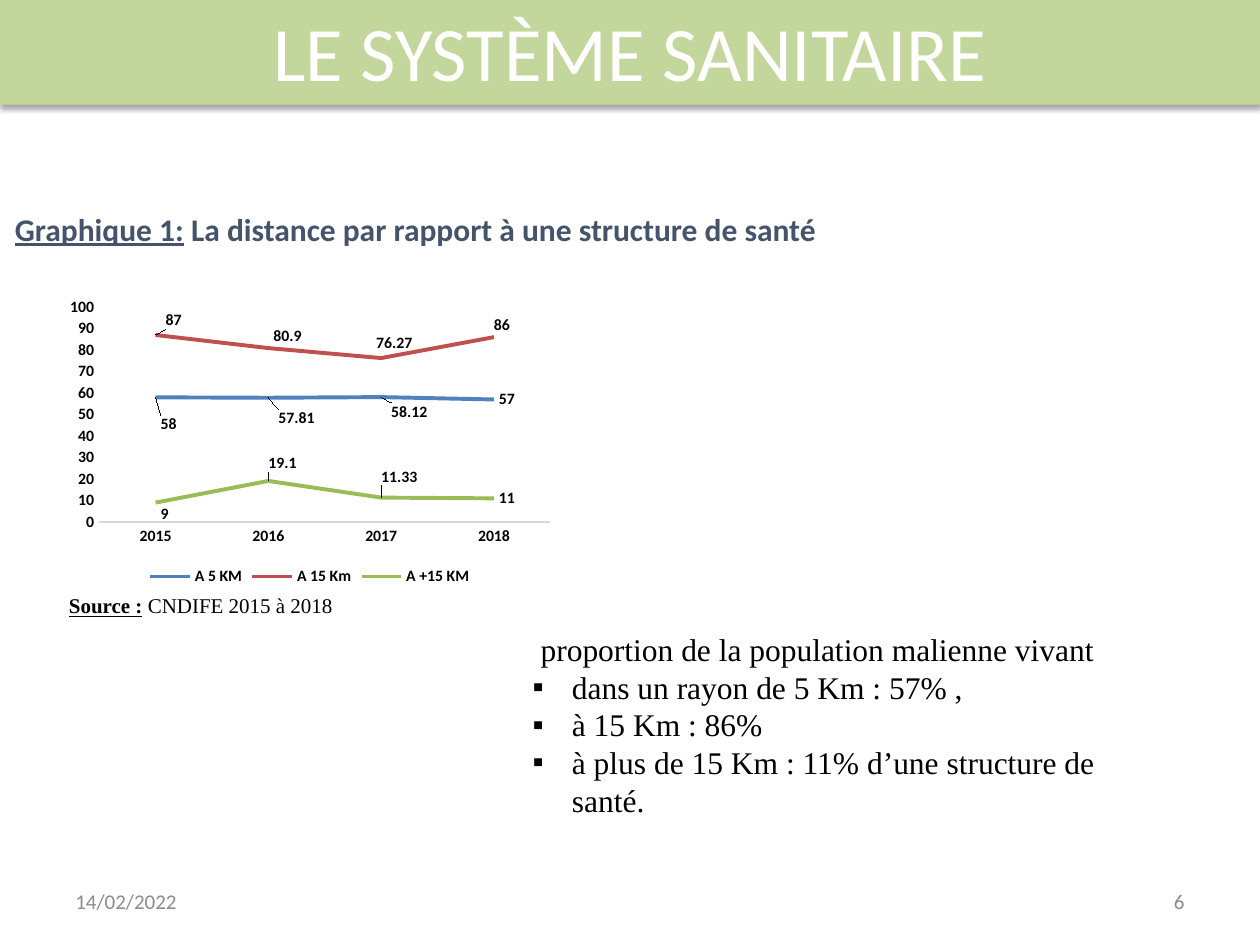
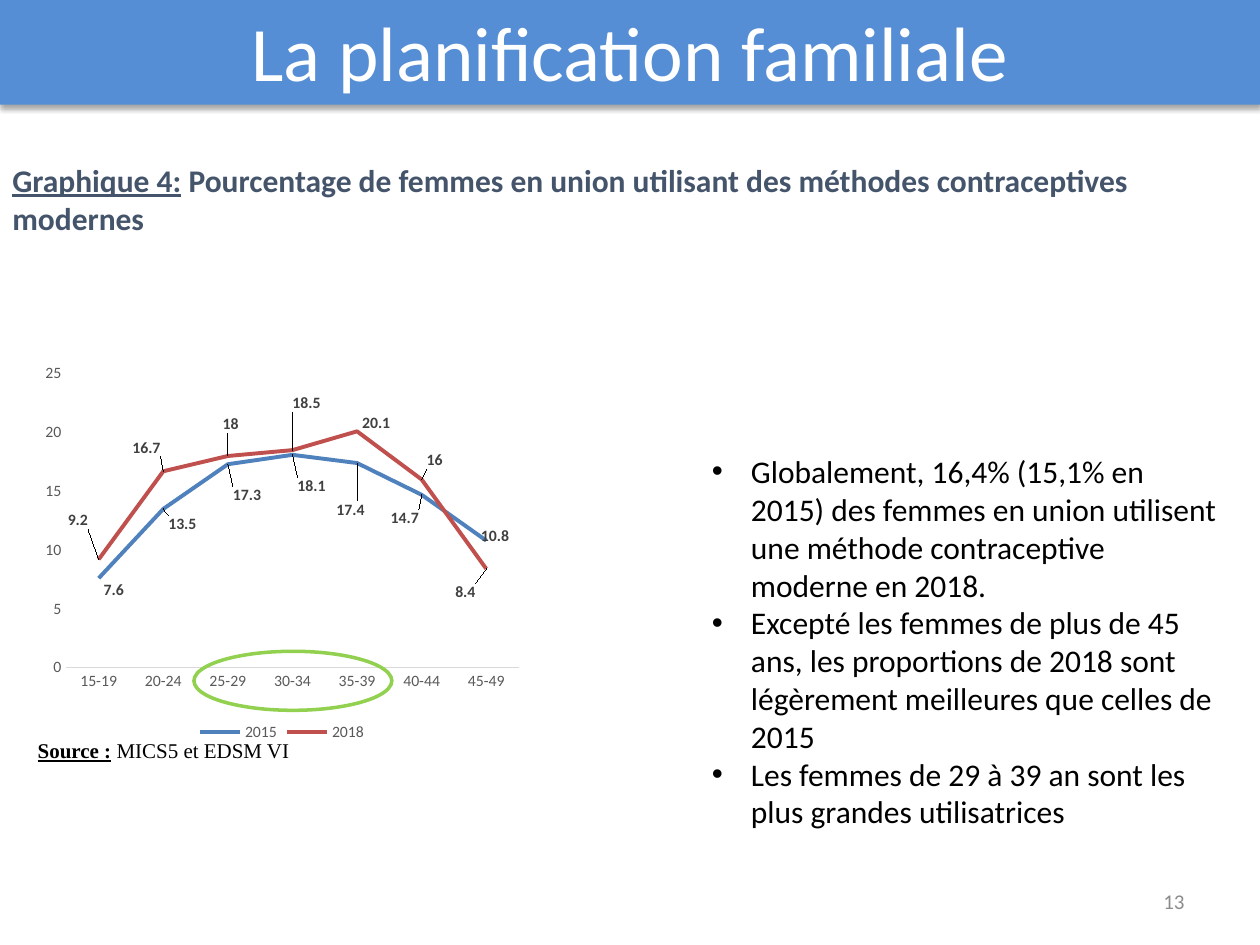
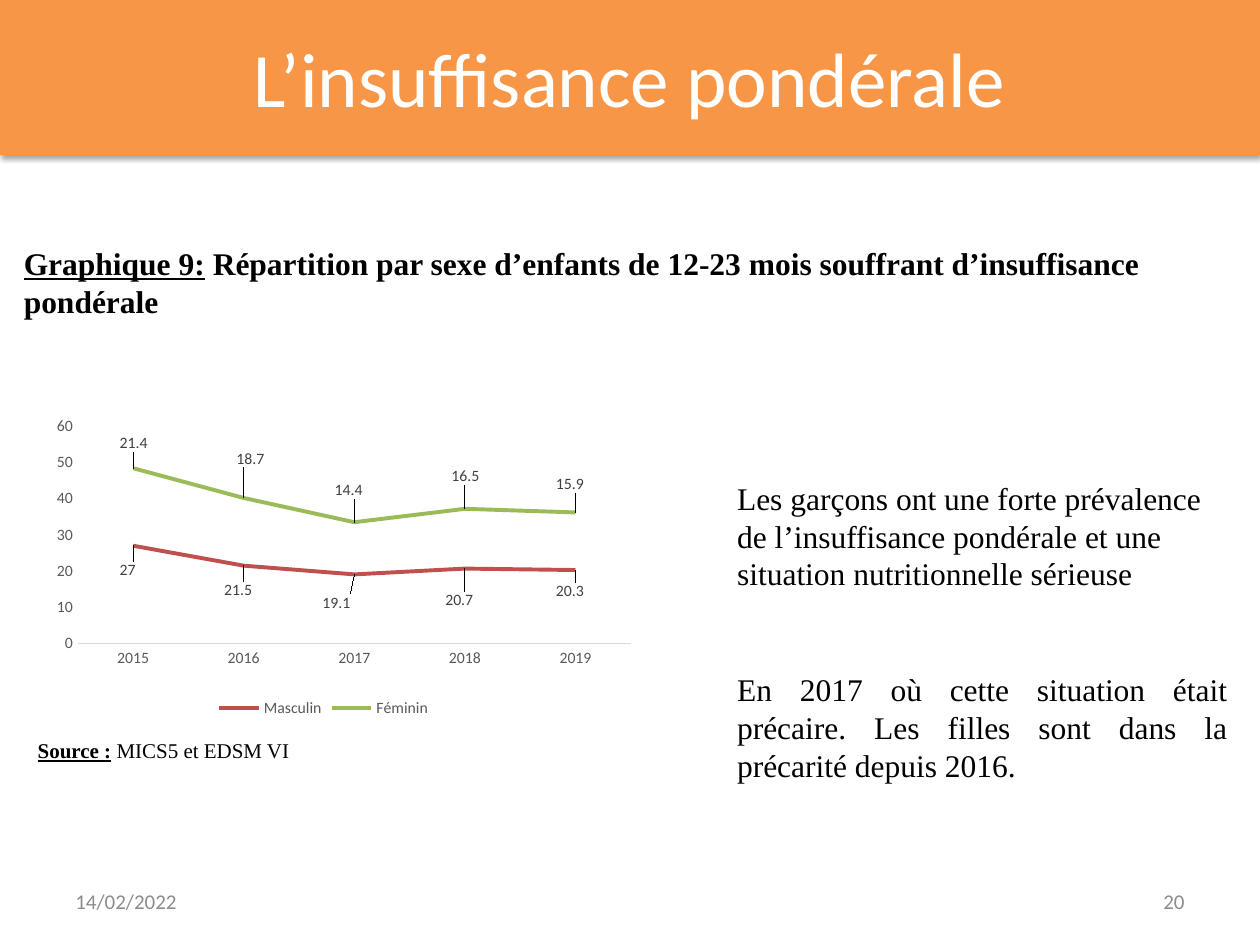
from lxml import etree
from pptx import Presentation
from pptx.chart.data import CategoryChartData
from pptx.dml.color import RGBColor
from pptx.enum.chart import XL_CHART_TYPE as CT, XL_LABEL_POSITION as LP
from pptx.enum.chart import XL_LEGEND_POSITION, XL_TICK_MARK
from pptx.enum.shapes import MSO_SHAPE
from pptx.enum.text import MSO_ANCHOR as ANCHOR, MSO_AUTO_SIZE, PP_ALIGN as ALIGN
from pptx.oxml import parse_xml
from pptx.oxml.ns import nsdecls, qn
from pptx.util import Cm, Pt

COLORS = {
    "white": "FFFFFF", "black": "000000", "slate": "44546A", "footer": "8C8C8C",
    "axis_text": "595959", "label": "404040", "axis_line": "D9D9D9",
    "blue": "4F81BD", "red": "C0504D", "green": "9BBB59", "ring": "92D050",
    "band_green": "C3D69B", "band_blue": "558ED5", "band_orange": "F79646",
}
SANS, SERIF = "Calibri", "Times New Roman"
DATE = "14/02/2022"
INDENT = Cm(0.79)

BODY_SERIF = {"name": SERIF, "size": 18, "color": "black"}
BODY_SANS = {"name": SANS, "size": 18, "color": "black"}
HEAD_SANS = {"name": SANS, "size": 18, "color": "slate", "bold": True}
HEAD_SERIF = {"name": SERIF, "size": 18, "color": "black", "bold": True}
SOURCE = {"name": SERIF, "size": 12, "color": "black"}
FOOTER = {"name": SANS, "size": 12, "color": "footer"}
TITLE = {"name": SANS, "size": 44, "color": "white"}

# Boxes are left, top, width, height in cm.
# Each series holds name, colour, values and label shifts as shares of the chart.
SLIDES = [
    {
        "title": "LE SYSTÈME SANITAIRE", "band": "band_green", "band_height": 2.16,
        "number": 6, "date": True,
        "heading": ("Graphique 1:", " La distance par rapport à une structure de santé"),
        "heading_box": (0.05, 4.11, 21.84, 1.02), "heading_font": HEAD_SANS,
        "source": " CNDIFE 2015 à 2018", "source_at": (1.14, 11.79),
        "texts": [{
            "box": (10.49, 12.57, 13.36, 4.11), "font": BODY_SERIF, "bullet": "▪", "intro": 1,
            "lines": [" proportion de la population malienne vivant",
                      "dans un rayon de 5 Km : 57% ,",
                      "à 15 Km : 86%",
                      "à plus de 15 Km : 11% d’une structure de santé."],
        }],
        "chart": {
            "type": CT.LINE, "box": (1.19, 5.89, 10.11, 6.02), "plot": (0.08, 0.05, 0.9, 0.72),
            "axis_font": ("black", True), "label_font": ("black", True),
            "cats": ["2015", "2016", "2017", "2018"],
            "series": [
                ("A 5 KM", "blue", [58, 57.81, 58.12, 57],
                 [(0, 0.09), (0.01, 0.07), (0.01, 0.05), None]),
                ("A 15 Km", "red", [87, 80.9, 76.27, 86],
                 [(0.01, -0.05), (0, -0.04), (-0.02, -0.05), (-0.01, -0.04)]),
                ("A +15 KM", "green", [9, 19.1, 11.33, 11],
                 [(0, 0.04), (-0.01, -0.06), (-0.01, -0.07), None]),
            ],
        },
    },
    {
        "title": "La planification familiale", "band": "band_blue", "band_height": 2.16,
        "number": 13, "date": False,
        "heading": ("Graphique 4:", " Pourcentage de femmes en union utilisant des méthodes "
                    "contraceptives modernes"),
        "heading_box": (0, 3.12, 24.21, 1.8), "heading_font": HEAD_SANS,
        "source": " MICS5 et EDSM VI", "source_at": (0.51, 14.71),
        "texts": [{
            "box": (14.1, 8.53, 10.8, 8.79), "font": BODY_SANS, "bullet": "•",
            "anchor": ANCHOR.MIDDLE,
            "lines": ["Globalement, 16,4% (15,1% en 2015) des femmes en union utilisent "
                      "une méthode contraceptive moderne en 2018.",
                      "Excepté les femmes de plus de 45 ans, les proportions de 2018 sont "
                      "légèrement meilleures que celles de 2015",
                      "Les femmes de 29 à 39 an sont les plus grandes utilisatrices"],
        }],
        "chart": {
            "type": CT.LINE, "box": (0.51, 7.14, 10.36, 7.9), "plot": (0.08, 0.05, 0.88, 0.75),
            "axis_font": ("axis_text", False), "label_font": ("label", True),
            "cats": ["15-19", "20-24", "25-29", "30-34", "35-39", "40-44", "45-49"],
            "series": [
                ("2015", "blue", [7.6, 13.5, 17.3, 18.1, 17.4, 14.7, 10.8],
                 [(0, 0.03), (0, 0.04), (0, 0.08), (0, 0.08), (-0.05, 0.12),
                  (-0.07, 0.06), (-0.02, -0.01)]),
                ("2018", "red", [9.2, 16.7, 18, 18.5, 20.1, 16, 8.4],
                 [(-0.07, -0.1), (-0.07, -0.06), (-0.02, -0.08), (-0.01, -0.12),
                  (0, -0.02), (0, -0.05), (-0.07, 0.06)]),
            ],
        },
        "ring": (3.91, 13.13, 3.99, 1.19),
    },
    {
        "title": "L’insuffisance pondérale", "band": "band_orange", "band_height": 3.18,
        "number": 20, "date": True,
        "heading": ("Graphique 9:", " Répartition par sexe d’enfants de 12-23 mois souffrant "
                    "d’insuffisance pondérale"),
        "heading_box": (0.23, 4.8, 24.94, 2.57), "heading_font": HEAD_SERIF,
        "source": " MICS5 et EDSM VI", "source_at": (0.51, 14.71),
        "texts": [
            {"box": (14.61, 9.53, 10.39, 2.57), "font": BODY_SERIF,
             "lines": ["Les garçons ont une forte prévalence de l’insuffisance pondérale "
                       "et une situation nutritionnelle sérieuse"]},
            {"box": (14.61, 13.39, 10.39, 2.57), "font": BODY_SERIF, "align": ALIGN.JUSTIFY,
             "lines": ["En 2017 où cette situation était précaire. Les filles sont dans la "
                       "précarité depuis 2016. "]},
        ],
        "chart": {
            "type": CT.LINE_STACKED, "box": (0.33, 7.37, 12.4, 7.19),
            "plot": (0.1, 0.17, 0.9, 0.61),
            "axis_font": ("axis_text", False), "label_font": ("label", False),
            "cats": ["2015", "2016", "2017", "2018", "2019"],
            "series": [
                ("Masculin", "red", [27, 21.5, 19.1, 20.7, 20.3],
                 [(-0.03, 0.07), (-0.04, 0.07), (-0.06, 0.08), (-0.04, 0.09), (-0.04, 0.06)]),
                ("Féminin", "green", [21.4, 18.7, 14.4, 16.5, 15.9],
                 [(-0.03, -0.07), (-0.02, -0.11), (-0.04, -0.09), (-0.03, -0.09),
                  (-0.04, -0.08)]),
            ],
        },
    },
]


def rgb(name):
    return RGBColor.from_string(COLORS[name])


def set_font(font, fmt):
    for key, value in fmt.items():
        if key == "color":
            font.color.rgb = rgb(value)
        else:
            setattr(font, key, Pt(value) if key == "size" else value)


def add_run(p, text, fmt, **extra):
    r = p.add_run()
    r.text = text
    set_font(r.font, {**fmt, **extra})


def add_box(s, box, anchor=ANCHOR.TOP):
    tf = s.shapes.add_textbox(*map(Cm, box)).text_frame
    tf.word_wrap = True
    tf.vertical_anchor = anchor
    return tf


def add_bullet(p, char):
    pPr = p._p.get_or_add_pPr()
    pPr.set("marL", str(INDENT))
    pPr.set("indent", str(-INDENT))
    etree.SubElement(pPr, qn("a:buFont")).set("typeface", "Arial")
    etree.SubElement(pPr, qn("a:buChar")).set("char", char)


def add_title(s, text, band, height):
    sp = s.shapes.title
    sp.left, sp.top, sp.width, sp.height = map(Cm, (0, -0.05, 25.4, height))
    sp.fill.solid()
    sp.fill.fore_color.rgb = rgb(band)
    sp.line.fill.background()
    sp._element.spPr.append(parse_xml(
        f'<a:effectLst {nsdecls("a")}><a:outerShdw blurRad="{Pt(3.1)}" dist="{Pt(1.8)}" '
        f'dir="5400000" rotWithShape="0"><a:srgbClr val="{COLORS["black"]}">'
        '<a:alpha val="35000"/></a:srgbClr></a:outerShdw></a:effectLst>'))
    tf = sp.text_frame
    tf.auto_size = MSO_AUTO_SIZE.NONE
    tf.vertical_anchor = ANCHOR.MIDDLE
    p = tf.paragraphs[0]
    p.alignment = ALIGN.CENTER
    add_run(p, text, TITLE)


def add_captioned(s, box, caption, rest, fmt):
    """Add a line opened by a bold, underlined caption."""
    p = add_box(s, box).paragraphs[0]
    add_run(p, caption, fmt, bold=True, underline=True)
    add_run(p, rest, fmt)
    return p


def add_text(s, text):
    tf = add_box(s, text["box"], text.get("anchor", ANCHOR.TOP))
    for i, line in enumerate(text["lines"]):
        p = tf.add_paragraph() if i else tf.paragraphs[0]
        p.alignment = text.get("align", ALIGN.LEFT)
        add_run(p, line, text["font"])
        if "bullet" in text and i >= text.get("intro", 0):
            add_bullet(p, text["bullet"])


def add_footer(s, text, left, align):
    p = add_box(s, (left, 17.65, 5.92, 1.02), ANCHOR.MIDDLE).paragraphs[0]
    p.alignment = align
    add_run(p, text, FOOTER)


def manual_layout(**values):
    items = "".join(f'<c:{key} val="{value}"/>' for key, value in values.items())
    return parse_xml(f'<c:layout {nsdecls("c")}><c:manualLayout>{items}'
                     '</c:manualLayout></c:layout>')


def place_plot(chart, plot):
    area = chart._chartSpace.chart.plotArea
    for old in area.findall(qn("c:layout")):
        area.remove(old)
    x, y, w, h = plot
    area.insert(0, manual_layout(layoutTarget="inner", xMode="edge", yMode="edge",
                                 x=x, y=y, w=w, h=h))


def style_series(ser, color, shifts, label_font):
    ser.smooth = False
    ser.format.line.color.rgb = rgb(color)
    ser.format.line.width = Pt(2.25)
    labels = ser.data_labels
    labels.show_value = True
    labels.position = LP.RIGHT
    set_font(labels.font, label_font)
    for i, shift in enumerate(shifts):
        if shift:
            label = ser.points[i].data_label
            label.position = LP.RIGHT
            set_font(label.font, label_font)
    for dLbl in ser._element.iter(qn("c:dLbl")):
        idx = dLbl.find(qn("c:idx"))
        x, y = shifts[int(idx.get("val"))]
        idx.addnext(manual_layout(x=x, y=y))


def add_line_chart(s, spec):
    data = CategoryChartData()
    data.categories = spec["cats"]
    for name, _, values, _ in spec["series"]:
        data.add_series(name, values)
    chart = s.shapes.add_chart(spec["type"], *map(Cm, spec["box"]), data).chart
    axis_font, label_font = (
        {"name": SANS, "size": 9, "color": color, "bold": bold}
        for color, bold in (spec["axis_font"], spec["label_font"]))
    set_font(chart.font, {"name": SANS, "size": 10, "color": "black"})
    chart.has_title = False
    chart.has_legend = True
    chart.legend.position = XL_LEGEND_POSITION.BOTTOM
    chart.legend.include_in_layout = False
    set_font(chart.legend.font, axis_font)
    for axis in (chart.category_axis, chart.value_axis):
        axis.has_major_gridlines = False
        axis.major_tick_mark = axis.minor_tick_mark = XL_TICK_MARK.NONE
        set_font(axis.tick_labels.font, axis_font)
    line = chart.category_axis.format.line
    line.color.rgb = rgb("axis_line")
    line.width = Pt(0.75)
    chart.value_axis.format.line.fill.background()
    place_plot(chart, spec["plot"])
    plot = chart.plots[0]
    plot.vary_by_categories = False
    for ser, (_, color, _, shifts) in zip(plot.series, spec["series"]):
        style_series(ser, color, shifts, label_font)


def add_ring(s, box):
    sp = s.shapes.add_shape(MSO_SHAPE.OVAL, *map(Cm, box))
    sp.shadow.inherit = False
    sp.fill.background()
    sp.line.color.rgb = rgb("ring")
    sp.line.width = Pt(2)


def build_slide(prs, content):
    s = prs.slides.add_slide(prs.slide_layouts[5])
    add_title(s, content["title"], content["band"], content["band_height"])
    add_footer(s, str(content["number"]), 18.21, ALIGN.RIGHT)
    if content["date"]:
        add_footer(s, DATE, 1.27, ALIGN.LEFT)
    add_line_chart(s, content["chart"])
    p = add_captioned(s, content["heading_box"], *content["heading"], content["heading_font"])
    p.space_after = Pt(10)
    for text in content["texts"]:
        add_text(s, text)
    p = add_captioned(s, (*content["source_at"], 12.88, 0.79), "Source :",
                      content["source"], SOURCE)
    p.alignment = ALIGN.JUSTIFY
    p.line_spacing = 1.07
    p.space_after = Pt(8)
    if "ring" in content:
        add_ring(s, content["ring"])


def main():
    prs = Presentation()
    prs.slide_width, prs.slide_height = Cm(25.4), Cm(19.05)
    for content in SLIDES:
        build_slide(prs, content)
    prs.save("out.pptx")


if __name__ == "__main__":
    main()
